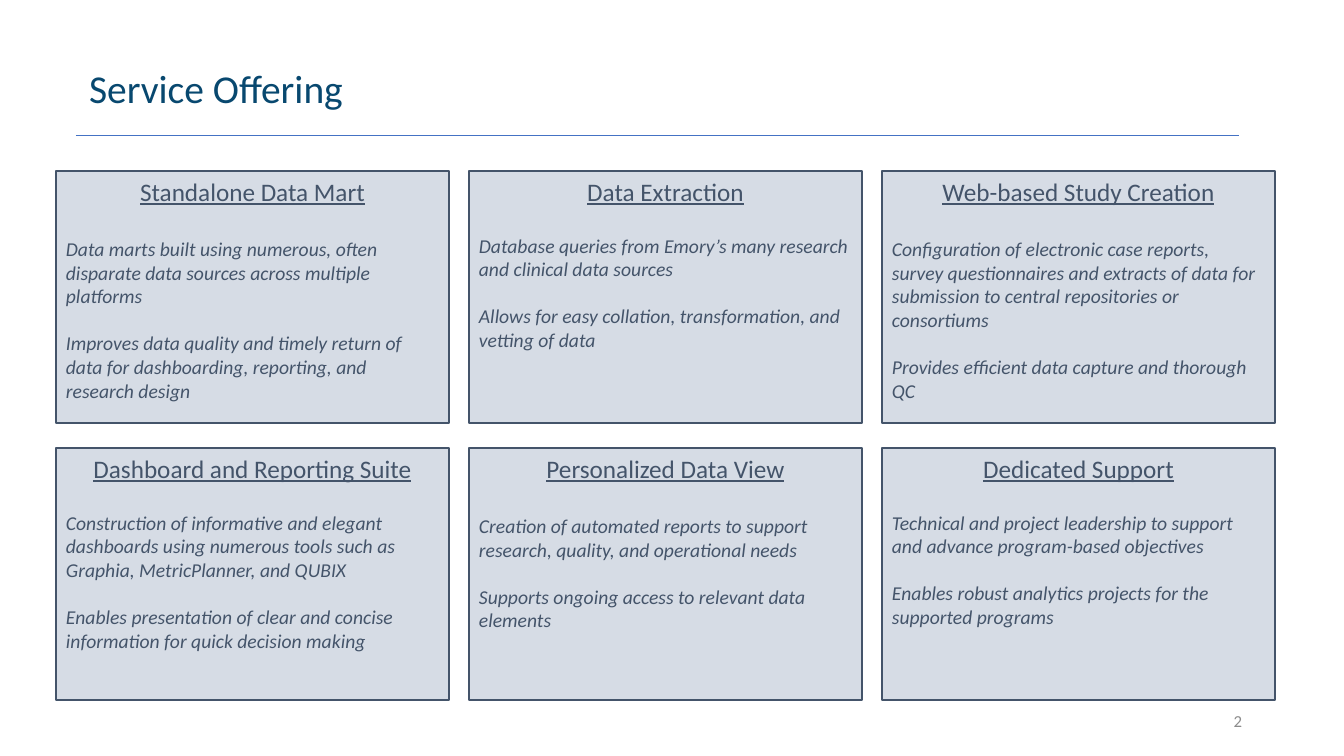
from pptx import Presentation
from pptx.dml.color import RGBColor
from pptx.enum.shapes import MSO_CONNECTOR, MSO_SHAPE
from pptx.enum.text import MSO_ANCHOR, MSO_AUTO_SIZE, PP_ALIGN
from pptx.oxml.ns import qn
from pptx.util import Pt
from lxml.etree import SubElement

PX = 914400 / 100.8
TITLE = RGBColor(0x08, 0x48, 0x6F)
RULE = RGBColor(0x44, 0x72, 0xC4)
SLATE = RGBColor(0x44, 0x54, 0x6A)
PANEL = RGBColor(0xD6, 0xDC, 0xE5)
GREY = RGBColor(0x8C, 0x8C, 0x8C)

SERVICES = [
    ("Standalone Data Mart", 22,
     "Data marts built using numerous, often disparate data sources across multiple platforms",
     "Improves data quality and timely return of data for dashboarding, reporting, and research design"),
    ("Data Extraction", 19.5,
     "Database queries from Emory’s many research and clinical data sources",
     "Allows for easy collation, transformation, and vetting of data"),
    ("Web-based Study Creation", 22,
     "Configuration of electronic case reports, survey questionnaires and extracts of data for "
     "submission to central repositories or consortiums",
     "Provides efficient data capture and thorough QC"),
    ("Dashboard and Reporting Suite", 19.5,
     "Construction of informative and elegant dashboards using numerous tools such as "
     "Graphia, MetricPlanner, and QUBIX",
     "Enables presentation of clear and concise information for quick decision making"),
    ("Personalized Data View", 22,
     "Creation of automated reports to support research, quality, and operational needs",
     "Supports ongoing access to relevant data elements"),
    ("Dedicated Support", 19.5,
     "Technical and project leadership to support and advance program-based objectives",
     "Enables robust analytics projects for the supported programs"),
]


def px(*lengths):
    return [round(n * PX) for n in lengths]


def write(p, text, size, color, align=PP_ALIGN.LEFT):
    p.text = text
    p.alignment = align
    font = p.runs[0].font
    font.name = "Calibri"
    font.size = Pt(size)
    font.color.rgb = color
    return font


prs = Presentation()
prs.slide_width, prs.slide_height = px(1344, 756)
s = prs.slides.add_slide(prs.slide_layouts[6])

tf = s.shapes.add_textbox(*px(76, 58, 283, 60)).text_frame
tf.word_wrap = False
tf.auto_size = MSO_AUTO_SIZE.SHAPE_TO_FIT_TEXT
tf.margin_left, tf.margin_top, tf.margin_right, tf.margin_bottom = px(13, 6, 13, 6)
write(tf.paragraphs[0], "Service Offering", 28.2, TITLE)

tf = s.shapes.add_textbox(*px(950, 701, 302, 40)).text_frame
tf.word_wrap = True
tf.vertical_anchor = MSO_ANCHOR.MIDDLE
write(tf.paragraphs[0], "2", 12, GREY, PP_ALIGN.RIGHT)

rule = s.shapes.add_connector(MSO_CONNECTOR.STRAIGHT, *px(76, 135, 1239, 135))
rule.line.color.rgb = RULE
rule.line.width = Pt(0.5)
SubElement(rule._element.spPr, qn("a:effectLst"))

for i, (heading, gap, what, benefit) in enumerate(SERVICES):
    row, col = divmod(i, 3)
    sp = s.shapes.add_shape(MSO_SHAPE.RECTANGLE, *px(56 + 413 * col, 171 + 277 * row, 393, 252))
    sp.shadow.inherit = False
    sp.fill.solid()
    sp.fill.fore_color.rgb = PANEL
    sp.line.color.rgb = SLATE
    sp.line.width = Pt(1)
    tf = sp.text_frame
    tf.word_wrap = True
    tf.vertical_anchor = MSO_ANCHOR.TOP
    write(tf.paragraphs[0], heading, 18, SLATE, PP_ALIGN.CENTER).underline = True
    for text, space in ((what, gap), (benefit, 17)):
        p = tf.add_paragraph()
        p.space_before = Pt(space)
        write(p, text, 14, SLATE).italic = True

prs.save("out.pptx")
